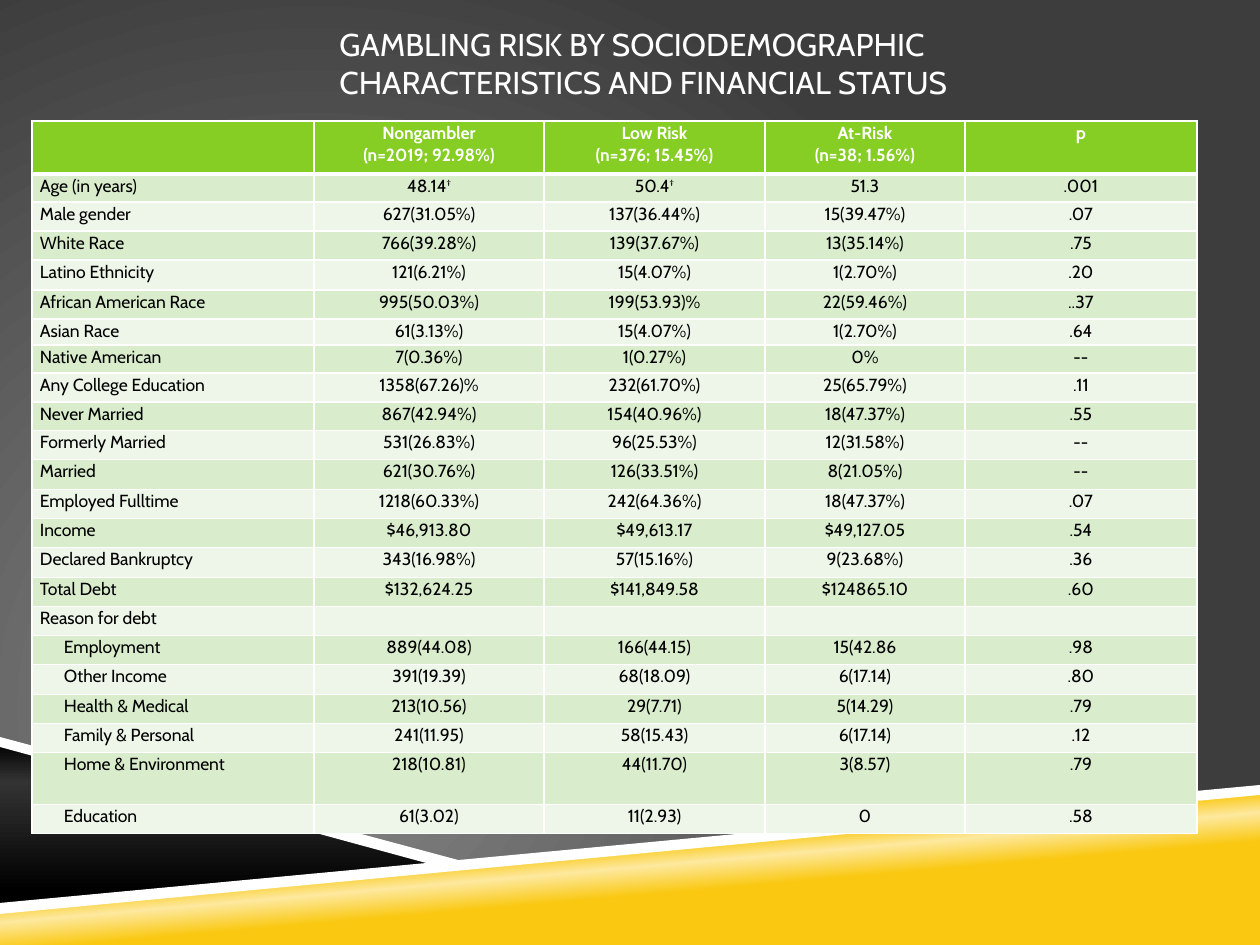
from lxml import etree
from pptx import Presentation
from pptx.dml.color import RGBColor
from pptx.enum.text import PP_ALIGN
from pptx.oxml import parse_xml
from pptx.oxml.ns import nsdecls, qn
from pptx.util import Emu, Pt

LEFT, CENTER = PP_ALIGN.LEFT, PP_ALIGN.CENTER
PX = 914400 / 126
FONT = "Cabin"
COLORS = {
    "white": "FFFFFF", "black": "000000", "charcoal": "333333",
    "gold": "FAC810", "cream": "FDE99F",
    "back_light": "878787", "back_dark": "3D3D3D",
    "header": "86CE24", "band_dark": "D9EDCD", "band_light": "EDF6E8",
}
COLUMN_WIDTHS = [282, 230, 221, 200, 232]
ROW_HEIGHTS = [53, 28, 29, 29, 30, 29, 26, 28, 29, 29, 29, 30,
               29, 29, 30, 29, 29, 29, 30, 29, 29, 52, 29]
HEADER = ["", "Nongambler\n(n=2019; 92.98%)", "Low Risk\n(n=376; 15.45%)",
          "At-Risk\n(n=38; 1.56%)", "p"]
PROFILE_ROWS = [
    ["Age (in years)", "48.14†", "50.4†", "51.3", ".001"],
    ["Male gender", "627(31.05%)", "137(36.44%)", "15(39.47%)", ".07"],
    ["White Race", "766(39.28%)", "139(37.67%)", "13(35.14%)", ".75"],
    ["Latino Ethnicity", "121(6.21%)", "15(4.07%)", "1(2.70%)", ".20"],
    ["African American Race", "995(50.03%)", "199(53.93)%", "22(59.46%)", "..37"],
    ["Asian Race", "61(3.13%)", "15(4.07%)", "1(2.70%)", ".64"],
    ["Native American", "7(0.36%)", "1(0.27%)", "0%", "--"],
    ["Any College Education", "1358(67.26)%", "232(61.70%)", "25(65.79%)", ".11"],
    ["Never Married", "867(42.94%)", "154(40.96%)", "18(47.37%)", ".55"],
    ["Formerly Married", "531(26.83%)", "96(25.53%)", "12(31.58%)", "--"],
    ["Married", "621(30.76%)", "126(33.51%)", "8(21.05%)", "--"],
    ["Employed Fulltime", "1218(60.33%)", "242(64.36%)", "18(47.37%)", ".07"],
    ["Income", "$46,913.80", "$49,613.17", "$49,127.05", ".54"],
    ["Declared Bankruptcy", "343(16.98%)", "57(15.16%)", "9(23.68%)", ".36"],
    ["Total Debt", "$132,624.25", "$141,849.58", "$124865.10", ".60"],
    ["Reason for debt", "", "", "", ""],
]
DEBT_ROWS = [
    ["Employment", "889(44.08)", "166(44.15)", "15(42.86", ".98"],
    ["Other Income", "391(19.39)", "68(18.09)", "6(17.14)", ".80"],
    ["Health & Medical", "213(10.56)", "29(7.71)", "5(14.29)", ".79"],
    ["Family & Personal", "241(11.95)", "58(15.43)", "6(17.14)", ".12"],
    ["Home & Environment", "218(10.81)", "44(11.70)", "3(8.57)", ".79"],
    ["Education", "61(3.02)", "11(2.93)", "0", ".58"],
]


def px(length):
    return Emu(round(length * PX))


def rgb(name):
    return RGBColor.from_string(COLORS[name])


def write_text(frame, text, size, color, bold=False, align=LEFT,
               line_spacing=None, indent=0):
    """Write one paragraph per line; a dagger becomes superscript."""
    for index, line in enumerate(text.split("\n")):
        para = frame.add_paragraph() if index else frame.paragraphs[0]
        para.alignment = align
        if line_spacing:
            para.line_spacing = line_spacing
        if indent:
            para._p.get_or_add_pPr().set("marL", str(px(indent)))
        for part in filter(None, line.partition("†")):
            span = para.add_run()
            span.text = part
            font = span.font
            font.name, font.size, font.bold = FONT, Pt(size), bold
            font.color.rgb = rgb(color)
            if part == "†":
                span._r.get_or_add_rPr().set("baseline", "30000")
        if not line:
            etree.SubElement(para._p, qn("a:endParaRPr"), sz=str(size * 100))


def add_text_box(slide, left, top, width, height, text, **text_format):
    box = slide.shapes.add_textbox(px(left), px(top), px(width), px(height))
    box.text_frame.word_wrap = True
    write_text(box.text_frame, text, **text_format)


def set_gradient(parent, stops, direction):
    """Swap the solid fill inside parent for a gradient."""
    stop_xml = "".join(
        f'<a:gs pos="{position * 1000}"><a:srgbClr val="{COLORS[name]}"/></a:gs>'
        for position, name in stops)
    gradient = parse_xml(f'<a:gradFill {nsdecls("a")} rotWithShape="1">'
                         f'<a:gsLst>{stop_xml}</a:gsLst>{direction}</a:gradFill>')
    parent.replace(parent.find(qn("a:solidFill")), gradient)


def paint_background(slide):
    slide.background.fill.solid()
    set_gradient(slide._element.find(".//" + qn("p:bgPr")),
                 [(0, "back_light"), (100, "back_dark")],
                 '<a:path path="circle"><a:fillToRect l="50000" t="100000" '
                 'r="100000" b="50000"/></a:path>')


def add_polygon(slide, points, color="white", stops=None, angle=0):
    builder = slide.shapes.build_freeform(*points[0], scale=PX)
    builder.add_line_segments(points[1:], close=True)
    shape = builder.convert_to_shape()
    shape.shadow.inherit = False
    shape.line.fill.background()
    shape.fill.solid()
    shape.fill.fore_color.rgb = rgb(color)
    if stops:
        set_gradient(shape._element.spPr, stops,
                     f'<a:lin ang="{angle * 60000}" scaled="0"/>')


def set_borders(cell, bottom):
    properties = cell._tc.get_or_add_tcPr()
    widths = {"lnL": 1, "lnR": 1, "lnT": 1, "lnB": bottom}
    for index, (tag, width) in enumerate(widths.items()):
        properties.insert(index, parse_xml(
            f'<a:{tag} {nsdecls("a")} w="{Pt(width)}"><a:solidFill>'
            f'<a:srgbClr val="{COLORS["white"]}"/></a:solidFill></a:{tag}>'))


def fill_cell(cell, text, fill, bottom=1, **text_format):
    cell.margin_left = cell.margin_right = px(8)
    cell.margin_top = cell.margin_bottom = 0
    cell.fill.solid()
    cell.fill.fore_color.rgb = rgb(fill)
    set_borders(cell, bottom)
    write_text(cell.text_frame, text, size=10, line_spacing=1.07, **text_format)


def add_risk_table(slide, left, top):
    rows = [HEADER] + PROFILE_ROWS + DEBT_ROWS
    table = slide.shapes.add_table(
        len(rows), len(HEADER), px(left), px(top),
        px(sum(COLUMN_WIDTHS)), px(sum(ROW_HEIGHTS))).table
    for column, width in zip(table.columns, COLUMN_WIDTHS):
        column.width = px(width)
    for row, height in zip(table.rows, ROW_HEIGHTS):
        row.height = px(height)
    for r, values in enumerate(rows):
        for c, text in enumerate(values):
            align = CENTER if c else LEFT
            if r == 0:
                fill_cell(table.cell(r, c), text, "header", bottom=3,
                          color="white", bold=True, align=align)
            else:
                indented = c == 0 and r > len(PROFILE_ROWS)
                fill_cell(table.cell(r, c), text,
                          "band_dark" if r % 2 else "band_light",
                          color="black", align=align, indent=24 if indented else 0)


def main():
    deck = Presentation()
    deck.slide_width, deck.slide_height = px(1260), px(945)
    slide = deck.slides.add_slide(deck.slide_layouts[6])
    paint_background(slide)

    # Gold and black bands with their white edges
    add_polygon(slide, [(0, 908), (1260, 790), (1260, 945), (0, 945)],
                stops=[(39, "gold"), (50, "cream"), (58, "gold")], angle=265)
    add_polygon(slide, [(0, 742), (452, 863), (0, 908)],
                stops=[(0, "black"), (24, "charcoal"), (90, "black")], angle=90)
    add_polygon(slide, [(1260, 785), (0, 903), (0, 914), (1260, 795)])
    add_polygon(slide, [(0, 737), (0, 747), (441, 867), (473, 864)])

    # Table and title
    add_risk_table(slide, 32, 121)
    add_text_box(slide, 327, 19, 654, 89,
                 "GAMBLING RISK BY SOCIODEMOGRAPHIC\n"
                 "CHARACTERISTICS AND FINANCIAL STATUS",
                 size=18, color="white")
    deck.save("out.pptx")


if __name__ == "__main__":
    main()
